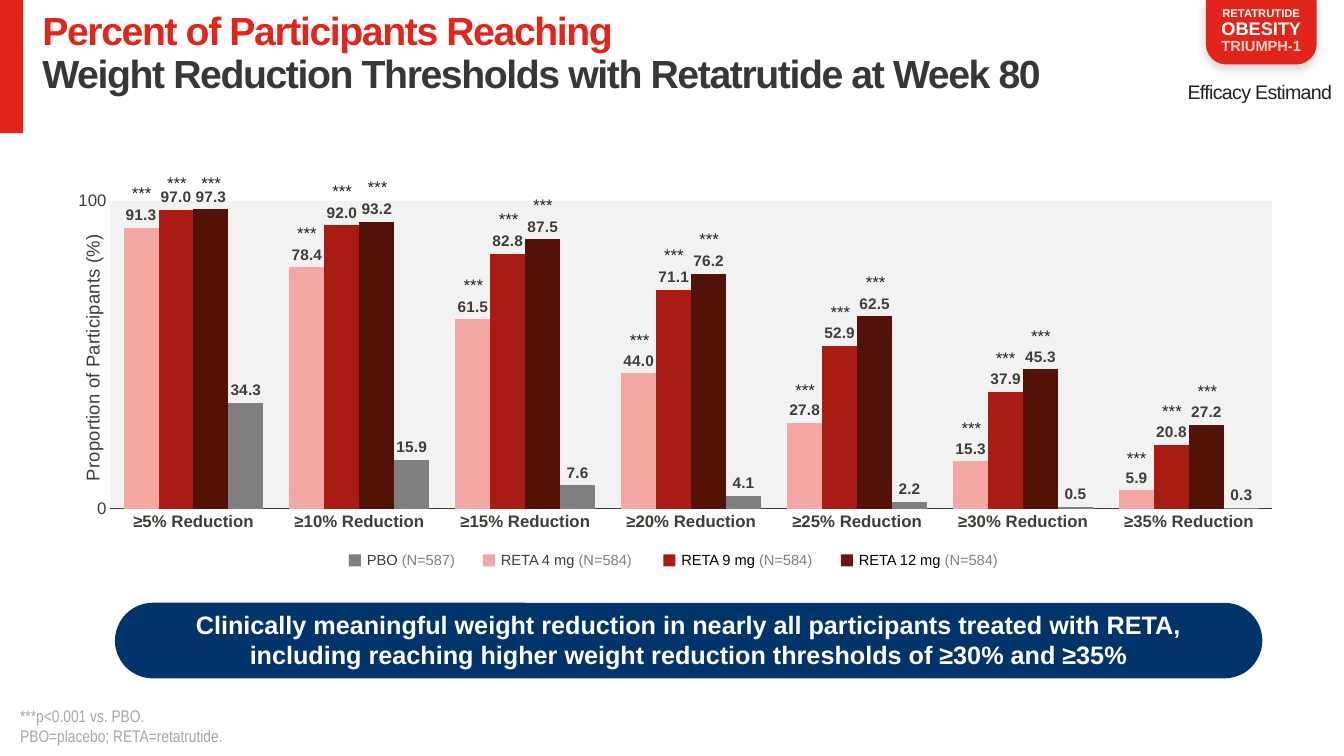
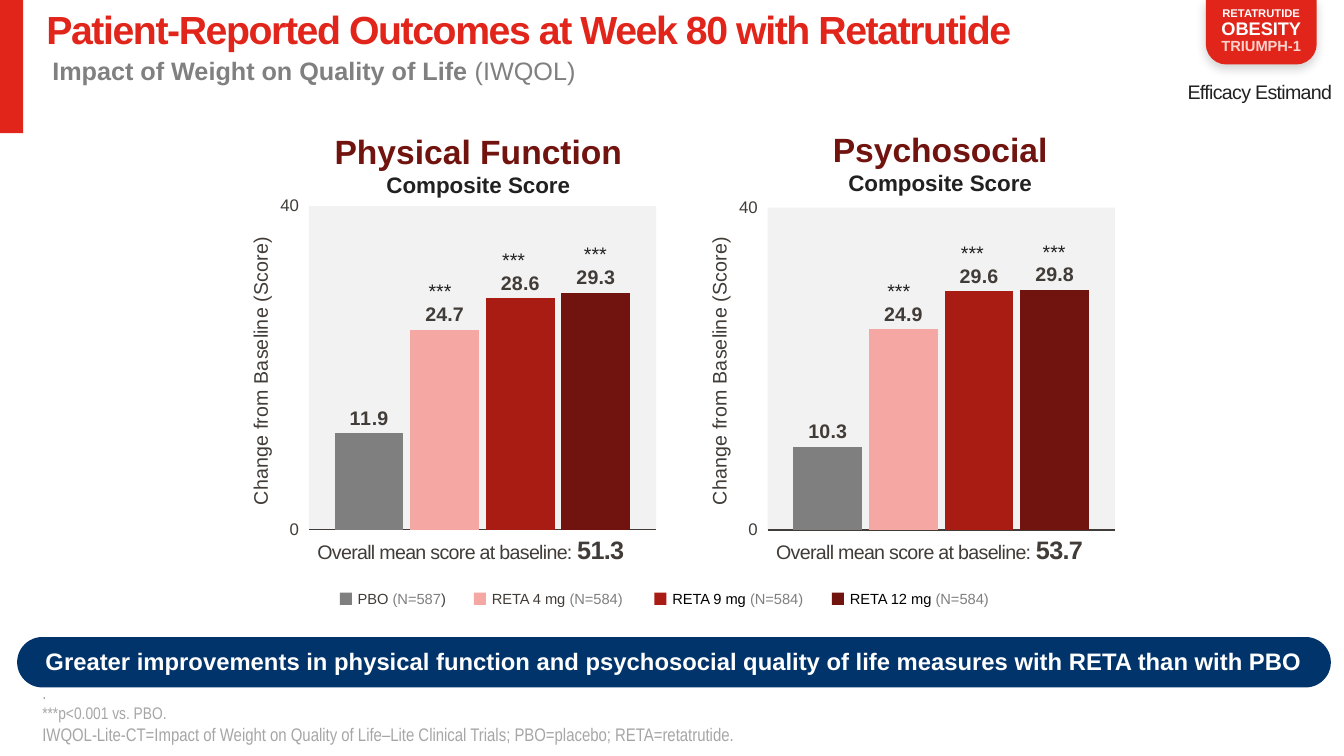
from lxml.etree import SubElement
from pptx import Presentation
from pptx.chart.data import CategoryChartData
from pptx.dml.color import RGBColor
from pptx.enum.chart import XL_CHART_TYPE, XL_LABEL_POSITION, XL_TICK_LABEL_POSITION, XL_TICK_MARK
from pptx.enum.shapes import MSO_SHAPE
from pptx.enum.text import MSO_ANCHOR, MSO_AUTO_SIZE, PP_ALIGN
from pptx.oxml import parse_xml
from pptx.oxml.ns import nsdecls, qn
from pptx.util import Pt

PX = 9144  # 100 px to the inch


class Theme:
    font, narrow = "Arial", "Arial Narrow"
    red, blush, navy, white = "E1251B", "FBD2CB", "01346B", "FFFFFF"
    ink, text, heading, black = "212121", "413C37", "373737", "000000"
    gray, note, subtitle, plot = "7F7F7F", "A6A6A6", "808080", "F2F2F2"
    pbo, reta4, reta9, reta12, darkest = gray, "F4A7A3", "A81C14", "71130E", "521207"


# Run styles: size, color, and optional bold, spacing, font
TITLE = dict(size=28, color=Theme.red, bold=True, spacing=-100)
TITLE_DARK = {**TITLE, "color": Theme.heading}
ESTIMAND = dict(size=14, color=Theme.ink, spacing=-50)
NOTE = dict(size=12, color=Theme.note, font=Theme.narrow)
NOTE_LARGE = {**NOTE, "size": 13}
BASELINE = dict(size=14, color=Theme.text, spacing=-50)
BASELINE_VALUE = {**BASELINE, "size": 18, "bold": True}
PANEL = dict(size=24, color=Theme.reta12, bold=True)
PANEL_SUB = dict(size=16, color=Theme.ink, bold=True)
SUBTITLE = dict(size=18, color=Theme.subtitle)

# Shared content
BADGE = [
    [("RETATRUTIDE", dict(size=8, color=Theme.white, bold=True))],
    [("OBESITY", dict(size=13, color=Theme.white, bold=True))],
    [("TRIUMPH-1", dict(size=10.5, color=Theme.blush, bold=True))],
]
LEGEND = [  # x offset, swatch, label color, arm, count
    (0, Theme.pbo, Theme.text, "PBO ", "(N=587"),
    (133, Theme.reta4, Theme.text, "RETA 4 mg ", "(N=584"),
    (312, Theme.reta9, Theme.black, "RETA 9 mg ", "(N=584"),
    (488, Theme.reta12, Theme.black, "RETA 12 mg ", "(N=584"),
]

# Charts
THRESHOLDS = dict(
    at=(46, 186, 1223, 356), plot=(0.052, 0.028, 0.942, 0.866),
    categories=[f"≥{share}% Reduction" for share in range(5, 40, 5)],
    series=[
        (Theme.reta4, (91.3, 78.4, 61.5, 44, 27.8, 15.3, 5.9)),
        (Theme.reta9, (97, 92, 82.8, 71.1, 52.9, 37.9, 20.8)),
        (Theme.darkest, (97.3, 93.2, 87.5, 76.2, 62.5, 45.3, 27.2)),
        (Theme.pbo, (34.3, 15.9, 7.6, 4.1, 2.2, 0.5, 0.3)),
    ],
    top=100, overlap=0, category_labels=True, tick=XL_TICK_MARK.NONE, label_size=11,
    axis_title="Proportion of Participants (%)", axis_size=13.3, axis_at=(0.025, 0.12),
    stars=dict(nudge={0: 1, 1: 1, 2: 1}, rise=47, highest=166, size=12, height=30),
)


def score_chart(left, plot, values):
    return dict(
        at=(left, 164, 475, 500), plot=plot, categories=["1"],
        series=[(color, (value,)) for color, value in zip(
            (Theme.pbo, Theme.reta4, Theme.reta9, Theme.reta12), values)],
        top=40, overlap=-10, category_labels=False, tick=XL_TICK_MARK.OUTSIDE, label_size=14,
        axis_title="Change from Baseline (Score)", axis_size=14, axis_at=(0.11, 0.135),
        stars=dict(nudge={1: -4, 2: -6, 3: 0}, rise=55, highest=0, size=14, height=34),
    )


SLIDES = [
    dict(
        title=((42, 12, 1098, 85), [[("Percent of Participants Reaching\n", TITLE),
               ("Weight Reduction Thresholds with Retatrutide at Week 80", TITLE_DARK)]]),
        charts=[THRESHOLDS],
        legend=(346, 550, Theme.gray),
        banner=((114, 598, 1138, 75), 18,
                "Clinically meaningful weight reduction in nearly all participants treated with RETA,\n"
                "including reaching higher weight reduction thresholds of ≥30% and ≥35%"),
        note=((20, 700, 981, 40),
              [[("***p<0.001 vs. PBO.\nPBO=placebo; RETA=retatrutide.", NOTE)]]),
        panels=[],
    ),
    dict(
        title=((46, 11, 1099, 42),
               [[("Patient-Reported Outcomes at Week 80 with Retatrutide", TITLE)]]),
        subtitle=((42, 50, 672, 40), [[("Impact of Weight on Quality of Life ",
                  {**SUBTITLE, "bold": True}), ("(IWQOL)", SUBTITLE)]]),
        charts=[
            score_chart(645, (0.245, 0.084, 0.725, 0.64), (10.3, 24.9, 29.6, 29.8)),
            score_chart(190, (0.245, 0.081, 0.725, 0.642), (11.9, 24.7, 28.6, 29.3)),
        ],
        legend=(337, 588, Theme.text),
        banner=((17, 632, 1303, 50), 17, "Greater improvements in physical function and "
                "psychosocial quality of life measures with RETA than with PBO"),
        note=((42, 699, 1250, 40), [
            [(".", NOTE_LARGE)],
            [("***p<0.001 vs. PBO.\n", NOTE),
             ("IWQOL-Lite-CT=Impact of Weight on Quality of Life–Lite Clinical Trials; "
              "PBO=placebo; RETA=retatrutide.", NOTE_LARGE)]]),
        panels=[  # name, heading left and top, baseline left, baseline score
            ("Physical Function", 301, 128, 305, "51.3"),
            ("Psychosocial", 759, 126, 760, "53.7"),
        ],
    ),
]


def rgb(color):
    return RGBColor.from_string(color)


def px(values):
    return [round(value * PX) for value in values]


# Text
def style_font(font, size, color, bold=False, name=Theme.font):
    for key, value in dict(size=Pt(size), bold=bold, name=name).items():
        setattr(font, key, value)
    font.color.rgb = rgb(color)


def write(frame, paragraphs, align=PP_ALIGN.LEFT, anchor=MSO_ANCHOR.TOP,
          insets=(10, 5, 10, 5), line_spacing=None):
    left, top, right, bottom = px(insets)
    settings = dict(word_wrap=True, auto_size=MSO_AUTO_SIZE.NONE, vertical_anchor=anchor,
                    margin_left=left, margin_top=top, margin_right=right, margin_bottom=bottom)
    for key, value in settings.items():
        setattr(frame, key, value)
    for index, runs in enumerate(paragraphs):
        paragraph = frame.add_paragraph() if index else frame.paragraphs[0]
        paragraph.alignment = align
        paragraph.line_spacing = line_spacing
        for content, style in runs:
            for number, line in enumerate(content.split("\n")):
                if number:
                    paragraph.add_line_break()
                if not line:
                    continue
                run = paragraph.add_run()
                run.text = line
                style_font(run.font, style["size"], style["color"], style.get("bold", False),
                           style.get("font", Theme.font))
                if "spacing" in style:
                    run._r.get_or_add_rPr().set("spc", str(style["spacing"]))


def add_text(slide, at, paragraphs, **layout):
    box = slide.shapes.add_textbox(*px(at))
    write(box.text_frame, paragraphs, **layout)
    return box


def add_block(slide, preset, at, fill, adjustments=()):
    block = slide.shapes.add_shape(preset, *px(at))
    block.shadow.inherit = False
    block.fill.solid()
    block.fill.fore_color.rgb = rgb(fill)
    block.line.fill.background()
    for index, value in enumerate(adjustments):
        block.adjustments[index] = value
    return block


# Charts
def place_manually(parent, **numbers):
    for old in parent.findall(qn("c:layout")):
        parent.remove(old)
    layout = parse_xml(f"<c:layout {nsdecls('c')}><c:manualLayout/></c:layout>")
    for tag, value in numbers.items():
        SubElement(layout[0], qn(f"c:{tag}")).set("val", str(value))
    parent.insert(1 if parent.find(qn("c:tx")) is not None else 0, layout)


def add_columns(slide, spec):
    data = CategoryChartData(number_format="#,##0.0")
    data.categories = spec["categories"]
    for number, (_, values) in enumerate(spec["series"], 1):
        data.add_series(f"Series {number}", values)
    chart = slide.shapes.add_chart(XL_CHART_TYPE.COLUMN_CLUSTERED, *px(spec["at"]), data).chart
    chart.has_legend = chart.has_title = False
    style_font(chart.font, 10, Theme.ink)

    # Bars and value labels
    bars = chart.plots[0]
    for key, value in dict(gap_width=75, overlap=spec["overlap"], vary_by_categories=False).items():
        setattr(bars, key, value)
    for series, (color, _) in zip(bars.series, spec["series"]):
        series.invert_if_negative = False
        series.format.fill.solid()
        series.format.fill.fore_color.rgb = rgb(color)
        labels = series.data_labels
        for key, value in dict(show_value=True, number_format="#,##0.0",
                               number_format_is_linked=False,
                               position=XL_LABEL_POSITION.OUTSIDE_END).items():
            setattr(labels, key, value)
        style_font(labels.font, spec["label_size"], Theme.text, True)

    # Axes
    categories, scale = chart.category_axis, chart.value_axis
    categories.major_tick_mark = XL_TICK_MARK.NONE
    categories.format.line.color.rgb = rgb(Theme.text)
    categories.format.line.width = Pt(1)
    style_font(categories.tick_labels.font, 12, Theme.text, True)
    if not spec["category_labels"]:
        categories.tick_label_position = XL_TICK_LABEL_POSITION.NONE
    for key, value in dict(minimum_scale=0, maximum_scale=spec["top"], major_unit=spec["top"],
                           has_major_gridlines=False, major_tick_mark=spec["tick"]).items():
        setattr(scale, key, value)
    scale.format.line.fill.background()
    scale.tick_labels.number_format = "#,##0"
    scale.tick_labels.number_format_is_linked = False
    style_font(scale.tick_labels.font, 12, Theme.text)
    heading = scale.axis_title
    caption = heading.text_frame.paragraphs[0].add_run()
    caption.text = spec["axis_title"]
    style_font(caption.font, spec["axis_size"], Theme.text)
    turn = heading.element.find(".//" + qn("a:bodyPr"))
    turn.set("rot", "-5400000")
    turn.set("vert", "horz")
    x, y = spec["axis_at"]
    place_manually(heading.element, xMode="edge", yMode="edge", x=x, y=y)

    # Plot area
    area = chart.element.find(".//" + qn("c:plotArea"))
    x, y, w, h = spec["plot"]
    place_manually(area, layoutTarget="inner", xMode="edge", yMode="edge", x=x, y=y, w=w, h=h)
    area.append(parse_xml(f'<c:spPr {nsdecls("c", "a")}><a:solidFill>'
                          f'<a:srgbClr val="{Theme.plot}"/></a:solidFill></c:spPr>'))


def add_stars(slide, spec):
    left, top, width, height = spec["at"]
    x, y, w, h = spec["plot"]
    stars, step = spec["stars"], 1 - spec["overlap"] / 100
    group = width * w / len(spec["categories"])
    bar = group / (1 + step * (len(spec["series"]) - 1) + 0.75)
    for index, nudge in stars["nudge"].items():
        for category, value in enumerate(spec["series"][index][1]):
            center = left + width * x + category * group + bar * (0.875 + step * index) + nudge
            bar_top = top + height * (y + h * (1 - value / spec["top"]))
            at = (round(center) - 22, max(round(bar_top) - stars["rise"], stars["highest"]),
                  43, stars["height"])
            add_text(slide, at, [[("***", dict(size=stars["size"], color=Theme.ink))]],
                     align=PP_ALIGN.CENTER, insets=(5, 5, 5, 5))


# Slide parts
def add_legend(slide, left, top, pbo_close):
    for offset, swatch, color, arm, count in LEGEND:
        add_block(slide, MSO_SHAPE.RECTANGLE, (left + offset, top, 12, 12), swatch)
        close = pbo_close if swatch == Theme.pbo else Theme.gray
        runs = [(part, dict(size=10.5, color=shade)) for part, shade in
                ((arm, color), (count, Theme.gray), (")", close))]
        add_text(slide, (left + offset + 8, top - 8, 163, 28), [runs], insets=(10, 5, 0, 5))


def add_banner(slide, at, size, message):
    banner = add_block(slide, MSO_SHAPE.ROUNDED_RECTANGLE, at, Theme.navy, [0.5])
    write(banner.text_frame, [[(message, dict(size=size, color=Theme.white, bold=True))]],
          align=PP_ALIGN.CENTER, anchor=MSO_ANCHOR.MIDDLE, insets=(10, 0, 10, 3))


def furnish_layout(layout, slide):
    """Builds the red band, badge and estimand label, then hands them to the layout."""
    for placeholder in list(layout.placeholders):
        if placeholder.placeholder_format.idx:
            placeholder.element.getparent().remove(placeholder.element)
    band = add_block(slide, MSO_SHAPE.RECTANGLE, (0, 0, 23, 132), Theme.red)
    badge = add_block(slide, MSO_SHAPE.ROUND_2_SAME_RECTANGLE, (1196, 0, 110, 64),
                      Theme.red, [0, 0.319])
    write(badge.text_frame, BADGE, align=PP_ALIGN.CENTER, anchor=MSO_ANCHOR.MIDDLE,
          insets=(8, 10, 8, 6), line_spacing=0.9)
    badge.element.spPr.find(qn("a:effectLst")).append(parse_xml(
        f'<a:outerShdw {nsdecls("a")} blurRad="{Pt(7)}" dist="{Pt(3)}" dir="5400000">'
        f'<a:srgbClr val="{Theme.ink}"><a:alpha val="20000"/></a:srgbClr></a:outerShdw>'))
    estimand = add_text(slide, (1154, 79, 191, 56), [[("Efficacy Estimand", ESTIMAND)]],
                        align=PP_ALIGN.CENTER, insets=(0, 0, 0, 0))
    for part in (band, badge, estimand):
        layout.shapes.element.append(part.element)


def fill_slide(slide, content):
    at, title = content["title"]
    for key, value in zip(("left", "top", "width", "height"), px(at)):
        setattr(slide.shapes.title, key, value)
    write(slide.shapes.title.text_frame, title, insets=(0, 0, 0, 0), line_spacing=0.9)
    if "subtitle" in content:
        add_text(slide, *content["subtitle"])
    for chart in content["charts"]:
        add_columns(slide, chart)
        add_stars(slide, chart)
    for name, left, top, baseline_left, score in content["panels"]:
        add_text(slide, (left, top, 347, 74), [[(name, PANEL)], [("Composite Score", PANEL_SUB)]],
                 align=PP_ALIGN.CENTER, insets=(10, 2, 10, 5))
        add_text(slide, (baseline_left, 525, 347, 40),
                 [[("Overall mean score at baseline: ", BASELINE), (score, BASELINE_VALUE)]])
    add_legend(slide, *content["legend"])
    add_banner(slide, *content["banner"])
    add_text(slide, *content["note"], anchor=MSO_ANCHOR.BOTTOM, insets=(0, 0, 0, 0))


def main():
    deck = Presentation()
    deck.slide_width, deck.slide_height = px((1333, 750))
    layout = deck.slide_layouts[5]
    slides = [deck.slides.add_slide(layout) for _ in SLIDES]
    furnish_layout(layout, slides[0])
    for slide, content in zip(slides, SLIDES):
        fill_slide(slide, content)
    deck.save("out.pptx")


if __name__ == "__main__":
    main()
